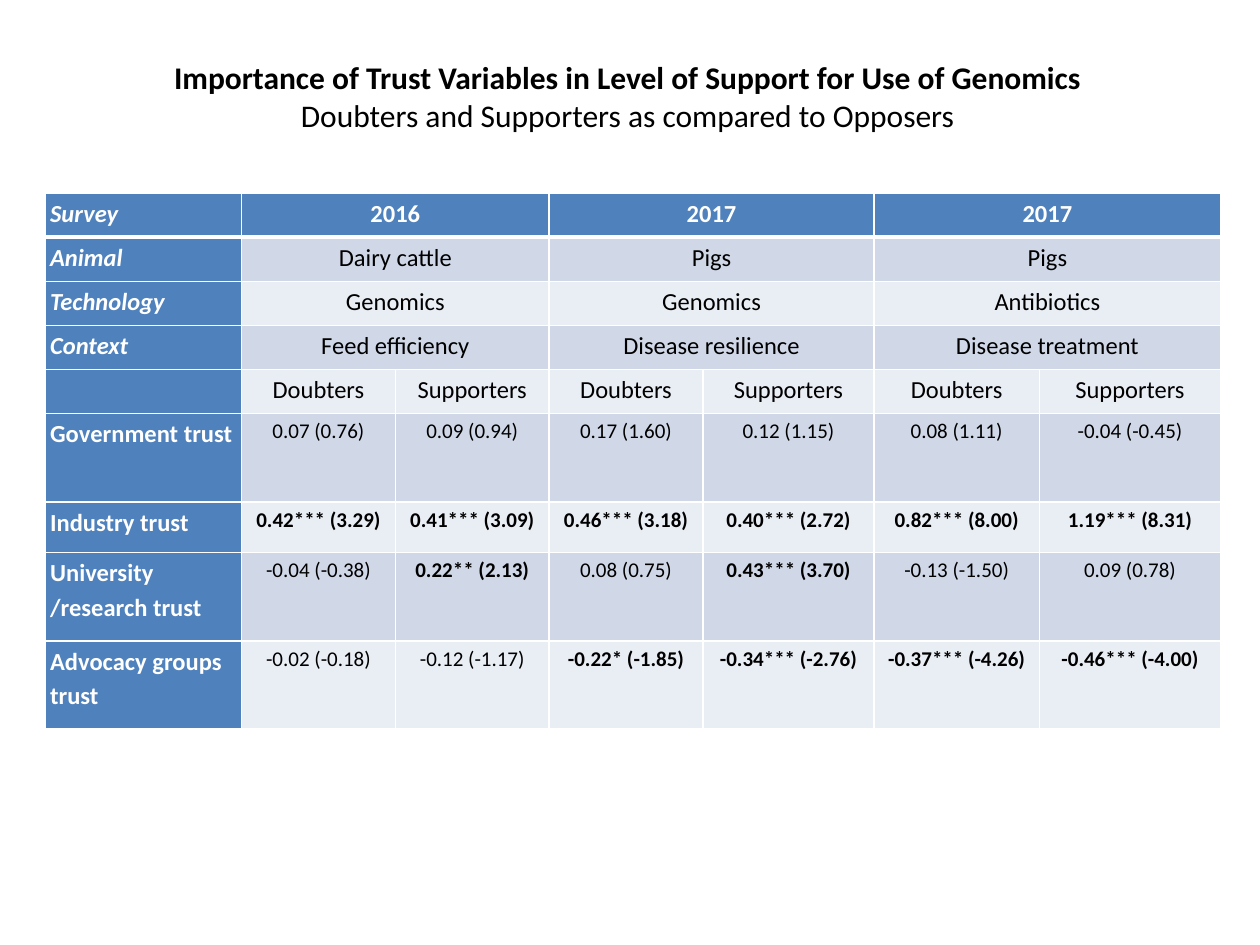
"""Build a slide with a table of trust variables and support for genomics."""
from dataclasses import dataclass

from lxml.etree import SubElement
from pptx import Presentation
from pptx.dml.color import RGBColor
from pptx.enum.text import PP_ALIGN
from pptx.oxml.ns import qn
from pptx.util import Cm, Pt


@dataclass(frozen=True)
class Theme:
    font: str = "Calibri"
    white: str = "FFFFFF"
    black: str = "000000"
    blue: str = "4F81BD"
    dark_band: str = "D0D8E8"
    light_band: str = "E9EDF4"
    title_size: int = 18
    label_size: int = 14
    value_size: int = 12


theme = Theme()


def write(frame, text, size, color=theme.black, bold=False, italic=False,
          align=PP_ALIGN.CENTER, spacing=None):
    """Add one paragraph per line of text, filling the empty first one."""
    for line in text.split("\n"):
        paragraph = frame.add_paragraph() if frame.text else frame.paragraphs[0]
        paragraph.alignment = align
        paragraph.line_spacing = spacing
        run = paragraph.add_run()
        run.text = line
        run.font.name = theme.font
        run.font.size = Pt(size)
        run.font.bold = bold
        run.font.italic = italic
        run.font.color.rgb = RGBColor.from_string(color)


def style_cell(cell, fill, bottom_width):
    """Set the margins, white borders and fill of a cell."""
    cell.margin_left = cell.margin_right = Cm(0.1)
    cell.margin_top, cell.margin_bottom = Cm(0.03), Cm(0)
    properties = cell._tc.get_or_add_tcPr()
    for side, width in (("L", 1), ("R", 1), ("T", 1), ("B", bottom_width)):
        border = SubElement(properties, qn(f"a:ln{side}"), w=str(Pt(width)))
        solid = SubElement(border, qn("a:solidFill"))
        SubElement(solid, qn("a:srgbClr"), val=theme.white)
    cell.fill.solid()
    cell.fill.fore_color.rgb = RGBColor.from_string(fill)


presentation = Presentation()
presentation.slide_width, presentation.slide_height = Cm(25.4), Cm(19.05)
slide = presentation.slides.add_slide(presentation.slide_layouts[6])

survey_rows = [
    ("Survey", "2016", "2017", "2017"),
    ("Animal", "Dairy cattle", "Pigs", "Pigs"),
    ("Technology", "Genomics", "Genomics", "Antibiotics"),
    ("Context", "Feed efficiency", "Disease resilience", "Disease treatment"),
]
group_row = ("", *("Doubters", "Supporters") * 3)
trust_rows = [
    ("Government trust", "0.07 (0.76)", "0.09 (0.94)", "0.17 (1.60)",
     "0.12 (1.15)", "0.08 (1.11)", "-0.04 (-0.45)"),
    ("Industry trust", "0.42*** (3.29)", "0.41*** (3.09)", "0.46*** (3.18)",
     "0.40*** (2.72)", "0.82*** (8.00)", "1.19*** (8.31)"),
    ("University\n/research trust", "-0.04 (-0.38)", "0.22** (2.13)", "0.08 (0.75)",
     "0.43*** (3.70)", "-0.13 (-1.50)", "0.09 (0.78)"),
    ("Advocacy groups trust", "-0.02 (-0.18)", "-0.12 (-1.17)", "-0.22* (-1.85)",
     "-0.34*** (-2.76)", "-0.37*** (-4.26)", "-0.46*** (-4.00)"),
]
rows = [*survey_rows, group_row, *trust_rows]
column_widths = [3.96, 3.1, 3.1, 3.1, 3.45, 3.33, 3.66]
row_heights = [0.89] * 5 + [1.78, 1.02, 1.78, 1.78]

table = slide.shapes.add_table(
    len(rows), len(column_widths), Cm(0.91), Cm(3.89),
    Cm(sum(column_widths)), Cm(sum(row_heights))).table
for column, width in zip(table.columns, column_widths):
    column.width = Cm(width)
for row, height in zip(table.rows, row_heights):
    row.height = Cm(height)

for row_index, texts in enumerate(rows):
    is_header = row_index == 0
    is_survey = row_index < len(survey_rows)
    is_trust = row_index > len(survey_rows)
    band = theme.dark_band if row_index % 2 else theme.light_band
    for column_index in range(len(column_widths)):
        is_blue = is_header or column_index == 0
        style_cell(table.cell(row_index, column_index),
                   theme.blue if is_blue else band, 3 if is_header else 1)

    for index, text in enumerate(texts):
        is_label = index == 0
        column_index = max(0, 2 * index - 1) if is_survey else index
        cell = table.cell(row_index, column_index)
        if is_survey and not is_label:
            cell.merge(table.cell(row_index, column_index + 1))
        if text:
            is_blue = is_header or is_label
            write(cell.text_frame, text,
                  size=theme.value_size if is_trust and not is_label else theme.label_size,
                  color=theme.white if is_blue else theme.black,
                  bold=is_blue or "*" in text,
                  italic=is_label and is_survey,
                  align=PP_ALIGN.LEFT if is_label else PP_ALIGN.CENTER,
                  spacing=1.15)

title = slide.shapes.add_textbox(Cm(1.57), Cm(1.04), Cm(22.17), Cm(1.8)).text_frame
title.word_wrap = True
write(title, "Importance of Trust Variables in Level of Support for Use of Genomics",
      size=theme.title_size, bold=True)
write(title, "Doubters and Supporters as compared to Opposers", size=theme.title_size)

presentation.save("out.pptx")
